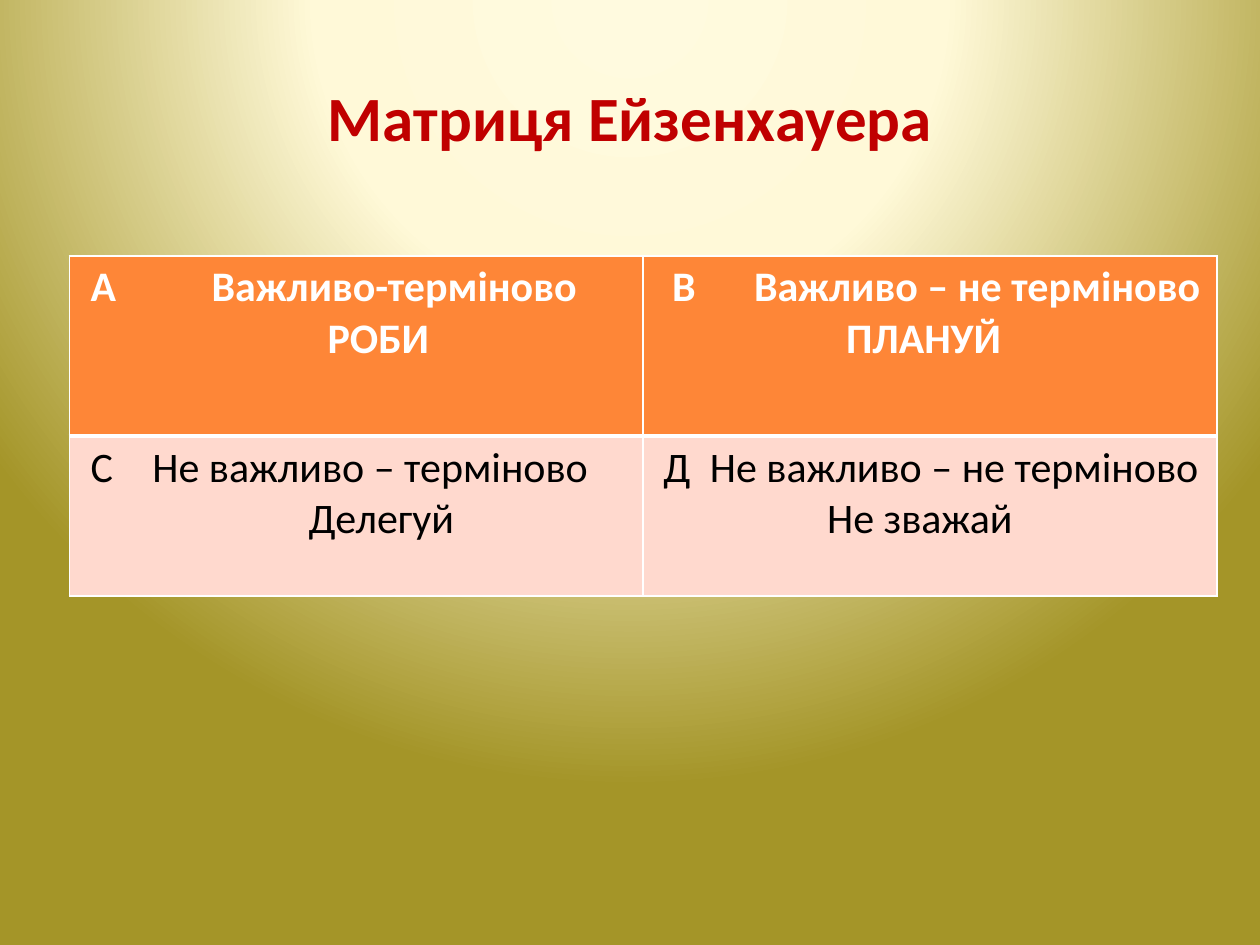
from pptx import Presentation
from pptx.dml.color import RGBColor
from pptx.enum.text import MSO_ANCHOR, PP_ALIGN
from pptx.oxml import parse_xml
from pptx.oxml.ns import nsdecls
from pptx.util import Inches, Pt

CENTER, LEFT = PP_ALIGN.CENTER, PP_ALIGN.LEFT
MIDDLE = MSO_ANCHOR.MIDDLE
FONT = "Calibri"
HEX = {"red": "C00000", "white": "FFFFFF", "black": "000000",
       "orange": "FE8637", "pink": "FFD9CE",
       "cream": "FFFADF", "pale": "FFF9D8", "olive": "A49528"}
STOPS = [(0, "cream"), (40, "pale"), (100, "olive")]

# Letter, heading, action, then their left offsets in inches
CELLS = [
    [("А", "Важливо-терміново", "РОБИ", 0.07, 1.03, 1.95),
     ("В", "Важливо – не терміново", "ПЛАНУЙ", 0.13, 0.78, 1.51)],
    [("С", "Не важливо – терміново", "Делегуй", 0.07, 0.56, 1.8),
     ("Д", "Не важливо – не терміново", "Не зважай", 0.06, 0.43, 1.36)],
]
ROWS = [(1.43, "orange", "white", True), (1.27, "pink", "black", False)]


def write(para, text, size=24, color="black", bold=False, align=LEFT,
          left=0, first=0):
    """Fill a paragraph; first is the first-line indent relative to left."""
    run = para.add_run()
    run.text = text
    font = run.font
    font.name, font.size, font.bold = FONT, Pt(size), bold
    font.color.rgb = RGBColor.from_string(HEX[color])
    para.alignment = align
    props = para._p.get_or_add_pPr()
    props.set("marL", str(Inches(left)))
    props.set("indent", str(Inches(first)))


def edge(cell, widths):
    """Draw white borders; widths maps L, R, T, B to points."""
    props = cell._tc.get_or_add_tcPr()
    for spot, side in enumerate("LRTB"):
        props.insert(spot, parse_xml(
            f'<a:ln{side} {nsdecls("a")} w="{Pt(widths[side])}"><a:solidFill>'
            f'<a:srgbClr val="{HEX["white"]}"/></a:solidFill></a:ln{side}>'))


def paint(slide):
    """Give the slide a round gradient centred above its top edge."""
    stops = "".join(f'<a:gs pos="{pos * 1000}"><a:srgbClr val="{HEX[name]}"/></a:gs>'
                    for pos, name in STOPS)
    slide.element.cSld.insert(0, parse_xml(
        f'<p:bg {nsdecls("p", "a")}><p:bgPr><a:gradFill rotWithShape="1">'
        f'<a:gsLst>{stops}</a:gsLst><a:path path="circle">'
        '<a:fillToRect l="50000" t="-80000" r="50000" b="180000"/></a:path>'
        '</a:gradFill><a:effectLst/></p:bgPr></p:bg>'))


def head(slide, x, y, w, h):
    title = slide.shapes.title
    title.left, title.top, title.width, title.height = map(Inches, (x, y, w, h))
    frame = title.text_frame
    frame.vertical_anchor = MIDDLE
    write(frame.paragraphs[0], "Матриця Ейзенхауера", size=36, color="red",
          bold=True, align=CENTER)


def matrix(slide, x, y, w, h):
    table = slide.shapes.add_table(2, 2, *map(Inches, (x, y, w, h))).table
    for r, (tall, fill, color, bold) in enumerate(ROWS):
        table.rows[r].height = Inches(tall)
        for c, (mark, text, act, start, tab, inset) in enumerate(CELLS[r]):
            cell = table.cell(r, c)
            cell.margin_right = Inches(0.05)
            cell.fill.solid()
            cell.fill.fore_color.rgb = RGBColor.from_string(HEX[fill])
            edge(cell, {"L": 1, "R": 1, "T": 3 if r else 1, "B": 1 if r else 3})
            frame = cell.text_frame
            write(frame.paragraphs[0], f"{mark}\t{text}", color=color,
                  bold=bold, left=tab, first=start - tab)
            write(frame.add_paragraph(), act, color=color, bold=bold, left=inset)


def main():
    deck = Presentation()
    deck.slide_width, deck.slide_height = Inches(10), Inches(7.5)
    slide = deck.slides.add_slide(deck.slide_layouts[5])
    paint(slide)
    head(slide, 0.5, 0.3, 9, 1.25)
    matrix(slide, 0.55, 2.03, 9.11, 2.7)
    deck.save("out.pptx")


if __name__ == "__main__":
    main()
